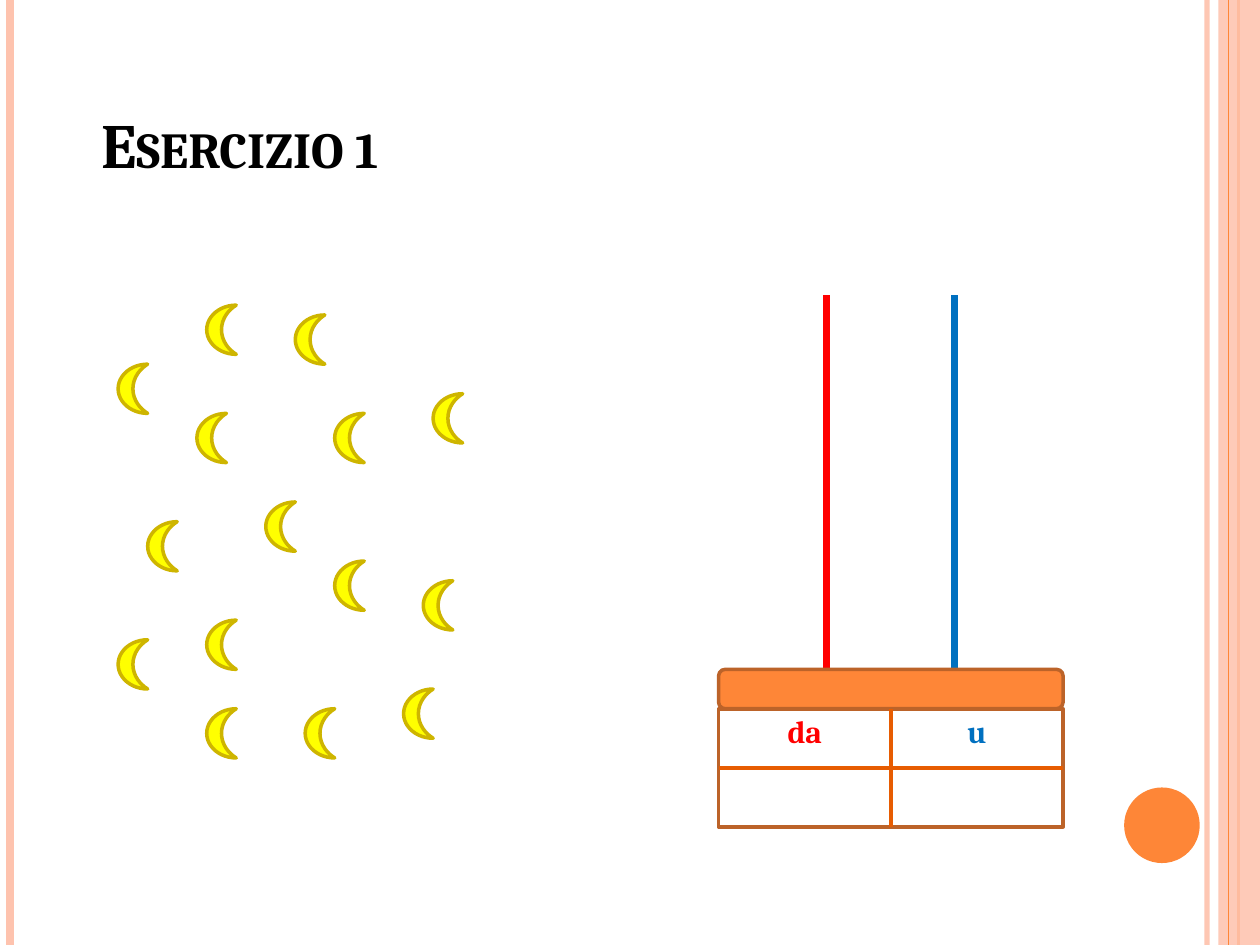
from dataclasses import dataclass

from lxml import etree
from pptx import Presentation
from pptx import util as u
from pptx.dml.color import RGBColor
from pptx.enum import shapes, text
from pptx.oxml.ns import qn

STEP = 10 / 128  # the slide is a grid of 128 columns by 96 rows
COLUMNS, ROWS = 128, 96


@dataclass(frozen=True)
class Theme:
    font: str = "Cambria"
    title_size: int = 36
    label_size: int = 18
    black: str = "000000"
    white: str = "FFFFFF"
    orange: str = "FE8637"
    pale: str = "FEC3AE"
    brown: str = "BC6329"
    grid: str = "E75C01"
    yellow: str = "FFFF00"
    gold: str = "CEB500"
    tens: str = "FF0000"
    units: str = "0070C0"


THEME = Theme()

# Column and row of each moon
MOONS = [(12, 37), (20, 42), (27, 51), (44, 40), (21, 31),
         (34, 57), (21, 63), (12, 65), (43, 59), (41, 70),
         (34, 42), (31, 72), (21, 72), (15, 53), (30, 32)]

# Abacus frame in grid steps
LEFT, TOP, WIDTH, HEIGHT = 73, 72, 35, 12
BASE_HEIGHT, ROD_TOP = 4, 30
RODS = [(84, THEME.tens), (97, THEME.units)]
LABELS = [("da", THEME.tens), ("u", THEME.units)]


def grid(*steps):
    return [u.Inches(step * STEP) for step in steps]


def set_format(target, values):
    for name, value in values.items():
        setattr(target, name, value)


def set_font(font, size, color):
    set_format(font, {"name": THEME.font, "size": u.Pt(size), "bold": True})
    font.color.rgb = RGBColor.from_string(color)


def set_alpha(element, percent):
    color = element.find(".//" + qn("a:srgbClr"))
    etree.SubElement(color, qn("a:alpha")).set("val", str(percent * 1000))


def add_figure(parent, kind, box, fill=None, line=None):
    shape = parent.add_shape(kind, *grid(*box))
    shape.shadow.inherit = False
    if fill:
        shape.fill.solid()
        shape.fill.fore_color.rgb = RGBColor.from_string(fill)
    else:
        shape.fill.background()
    if line:
        shape.line.color.rgb = RGBColor.from_string(line)
        shape.line.width = u.Pt(2)
    else:
        shape.line.fill.background()
    return shape


def add_line(slide, start, end, color, width):
    line = slide.shapes.add_connector(
        shapes.MSO_CONNECTOR.STRAIGHT, *grid(*start, *end))
    line.line.color.rgb = RGBColor.from_string(color)
    line.line.width = u.Pt(width)
    etree.SubElement(line._element.spPr, qn("a:effectLst"))
    return line


def add_side_line(slide, inches, color, width):
    column = inches / STEP
    return add_line(slide, (column, 0), (column, ROWS), color, width)


def add_decoration(slide):
    inner = add_side_line(slide, 9.58, THEME.pale, 3)
    set_alpha(inner._element.spPr, 93)
    add_side_line(slide, 0.08, THEME.pale, 4.5)
    add_side_line(slide, 9.83, THEME.orange, 1.5)
    band_left = 9.67 / STEP
    band = add_figure(slide.shapes, shapes.MSO_SHAPE.RECTANGLE,
                      (band_left, 0, COLUMNS - band_left, ROWS), THEME.pale)
    set_alpha(band._element.spPr, 87)
    add_side_line(slide, 9.75, THEME.orange, 0.75)
    add_figure(slide.shapes, shapes.MSO_SHAPE.OVAL,
               (114.2, 80, 7.68, 7.68), THEME.orange)


def add_title(slide, wording):
    title = slide.shapes.title
    left, top, width, height = grid(9, 6, 52, 13)
    set_format(title, {"left": left, "top": top,
                       "width": width, "height": height})
    set_format(title.text_frame, {"text": wording,
                                  "vertical_anchor": text.MSO_ANCHOR.BOTTOM})
    paragraph = title.text_frame.paragraphs[0]
    paragraph.alignment = text.PP_ALIGN.LEFT
    run = paragraph.runs[0]
    set_font(run.font, THEME.title_size, THEME.black)
    run._r.get_or_add_rPr().set("cap", "small")


def add_moons(slide):
    group = slide.shapes.add_group_shape()
    for column, row in MOONS:
        add_figure(group.shapes, shapes.MSO_SHAPE.MOON,
                   (column, row, 3, 5), THEME.yellow, THEME.gold)


def add_place_table(slide):
    table = slide.shapes.add_table(
        2, len(LABELS), *grid(LEFT, TOP, WIDTH, HEIGHT)).table
    for cell in table.iter_cells():
        cell.fill.solid()
        cell.fill.fore_color.rgb = RGBColor.from_string(THEME.white)
    for column, (label, color) in enumerate(LABELS):
        cell = table.cell(0, column)
        cell.text = label
        paragraph = cell.text_frame.paragraphs[0]
        paragraph.alignment = text.PP_ALIGN.CENTER
        set_font(paragraph.runs[0].font, THEME.label_size, color)


def add_abacus(slide):
    # Rods and base
    base_top = TOP - BASE_HEIGHT
    for column, color in RODS:
        add_line(slide, (column, ROD_TOP), (column, base_top), color, 4)
    add_figure(slide.shapes, shapes.MSO_SHAPE.ROUNDED_RECTANGLE,
               (LEFT, base_top, WIDTH, BASE_HEIGHT),
               THEME.orange, THEME.brown)
    # Place values with their frame and dividers
    add_place_table(slide)
    add_figure(slide.shapes, shapes.MSO_SHAPE.RECTANGLE,
               (LEFT, TOP, WIDTH, HEIGHT), line=THEME.brown)
    middle, center = LEFT + WIDTH / 2, TOP + HEIGHT / 2
    add_line(slide, (middle, TOP), (middle, TOP + HEIGHT), THEME.grid, 2)
    add_line(slide, (LEFT, center), (LEFT + WIDTH, center), THEME.grid, 2)


def main():
    presentation = Presentation()
    set_format(presentation, {"slide_width": u.Inches(10),
                              "slide_height": u.Inches(7.5)})
    slide = presentation.slides.add_slide(presentation.slide_layouts[5])
    add_decoration(slide)
    add_title(slide, "Esercizio 1")
    add_moons(slide)
    add_abacus(slide)
    presentation.save("out.pptx")


if __name__ == "__main__":
    main()
